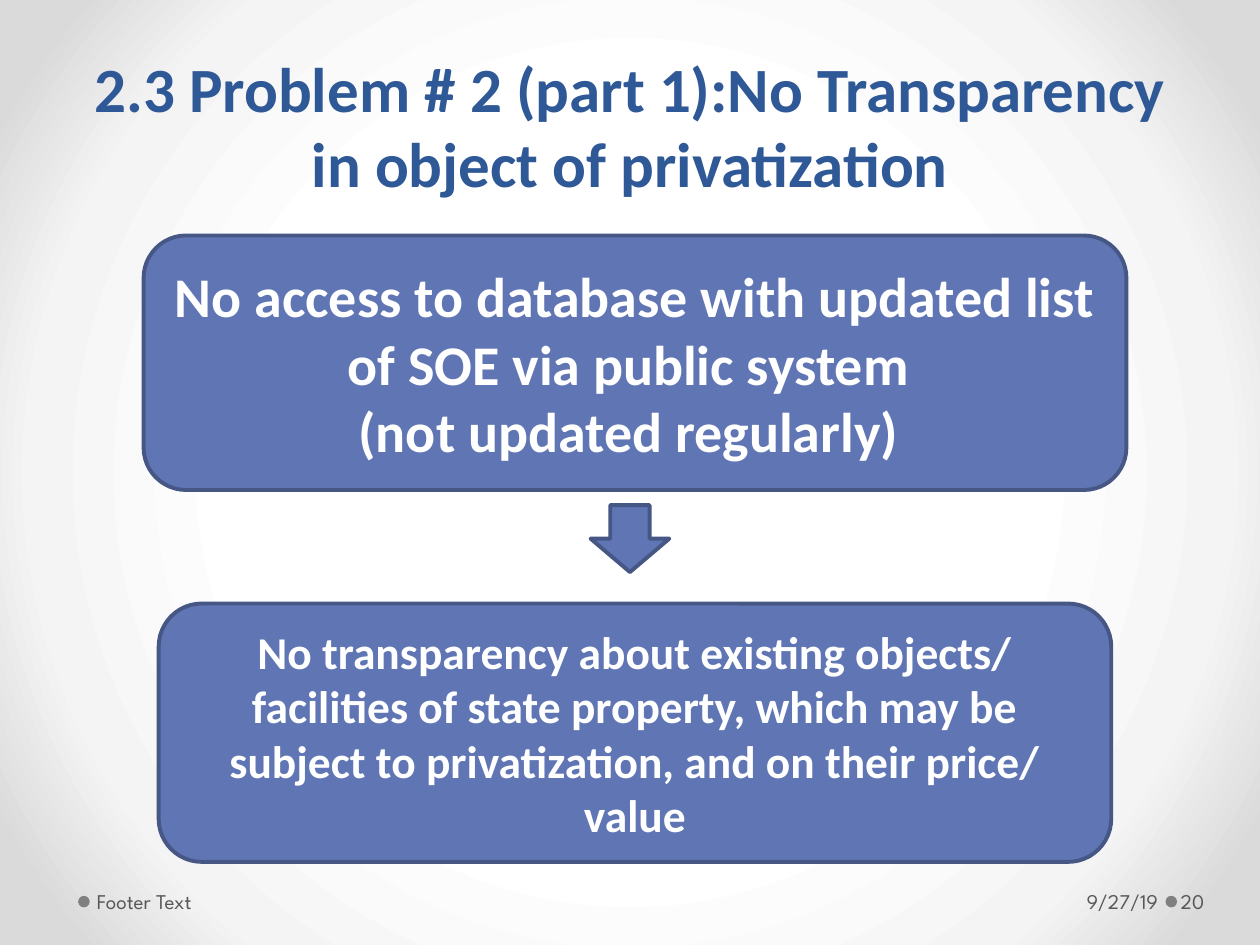
from pptx import Presentation, oxml
from pptx.dml.color import RGBColor
from pptx.enum import shapes, text
from pptx.oxml import ns
from pptx.util import Pt

SHAPE = shapes.MSO_SHAPE
ALIGN = text.PP_ALIGN
ANCHOR = text.MSO_ANCHOR


def write(sp, paragraphs, size, font, color, bold, align, anchor):
    tf = sp.text_frame
    tf.word_wrap = True
    tf.vertical_anchor = anchor
    tf.text = "\n".join(paragraphs)
    for p in tf.paragraphs:
        p.alignment = align
        for r in p.runs:
            r.font.size, r.font.name, r.font.bold = Pt(size), font, bold
            r.font.color.rgb = RGBColor.from_string(color)


def add_block(kind, box, fill, line=None):
    """Add a preset shape; without a line colour it has no outline."""
    sp = s.shapes.add_shape(kind, *map(Pt, box))
    sp.shadow.inherit = False
    sp.fill.solid()
    sp.fill.fore_color.rgb = RGBColor.from_string(fill)
    if line:
        sp.line.color.rgb = RGBColor.from_string(line)
        sp.line.width = Pt(2.25)
    else:
        sp.line.fill.background()
    return sp


prs = Presentation()
prs.slide_width, prs.slide_height = Pt(720), Pt(540)
s = prs.slides.add_slide(prs.slide_layouts[6])

# Background: circular gradient from the centre
s.background.fill.gradient()
stops = "".join(
    f'<a:gs pos="{pos * 1000}"><a:srgbClr val="{color}"/></a:gs>'
    for pos, color in [(50, "FFFFFF"), (76, "F4F4F4"), (92, "DADADA")]
)
grad = s.element.find(".//" + ns.qn("a:gradFill"))
grad.getparent().replace(grad, oxml.parse_xml(
    f'<a:gradFill {ns.nsdecls("a")} rotWithShape="1"><a:gsLst>{stops}</a:gsLst>'
    '<a:path path="circle"><a:fillToRect l="50000" t="50000" r="50000" b="50000"/>'
    '</a:path></a:gradFill>'
))

# Footer dots
for x in (666, 44.64):
    add_block(SHAPE.OVAL, (x, 511.9, 6.6, 6.6), "808080")

# Title
title = s.shapes.add_textbox(Pt(36), Pt(14.4), Pt(648), Pt(103.7))
write(title, ["2.3 Problem # 2 (part 1):No Transparency in object of privatization"],
      36, "Calibri", "2F5897", True, ALIGN.CENTER, ANCHOR.BOTTOM)

# Footer: text, left, width, left inset, right inset, alignment
for words, x, width, left, right, align in [
    ("9/27/19", 501.1, 164.2, 7.2, 3.6, ALIGN.RIGHT),
    ("Footer Text", 51.8, 223.9, 3.6, 7.2, ALIGN.LEFT),
    ("20", 672.5, 43.9, 2.2, 3.6, ALIGN.LEFT),
]:
    tb = s.shapes.add_textbox(Pt(x), Pt(500.4), Pt(width), Pt(28.8))
    tb.text_frame.margin_left, tb.text_frame.margin_right = Pt(left), Pt(right)
    write(tb, [words], 12, "League Spartan", "595959", False, align, ANCHOR.MIDDLE)

# Problem and its consequence
for box, size, paragraphs in [
    ((82.1, 134.6, 561.6, 145.4), 32,
     ["No access to database with updated list of SOE via public system ",
      "(not updated regularly) "]),
    ((90.7, 344.9, 544.3, 147.6), 26,
     ["No transparency about existing objects/ facilities of state property, "
      "which may be subject to privatization, and on their price/ value"]),
]:
    sp = add_block(SHAPE.ROUNDED_RECTANGLE, box, "6076B4", "475785")
    write(sp, paragraphs, size, "Calibri", "FFFFFF", True, ALIGN.CENTER, ANCHOR.MIDDLE)

add_block(SHAPE.DOWN_ARROW, (337.5, 288.7, 45, 38.2), "6076B4", "475785")

prs.save("out.pptx")
